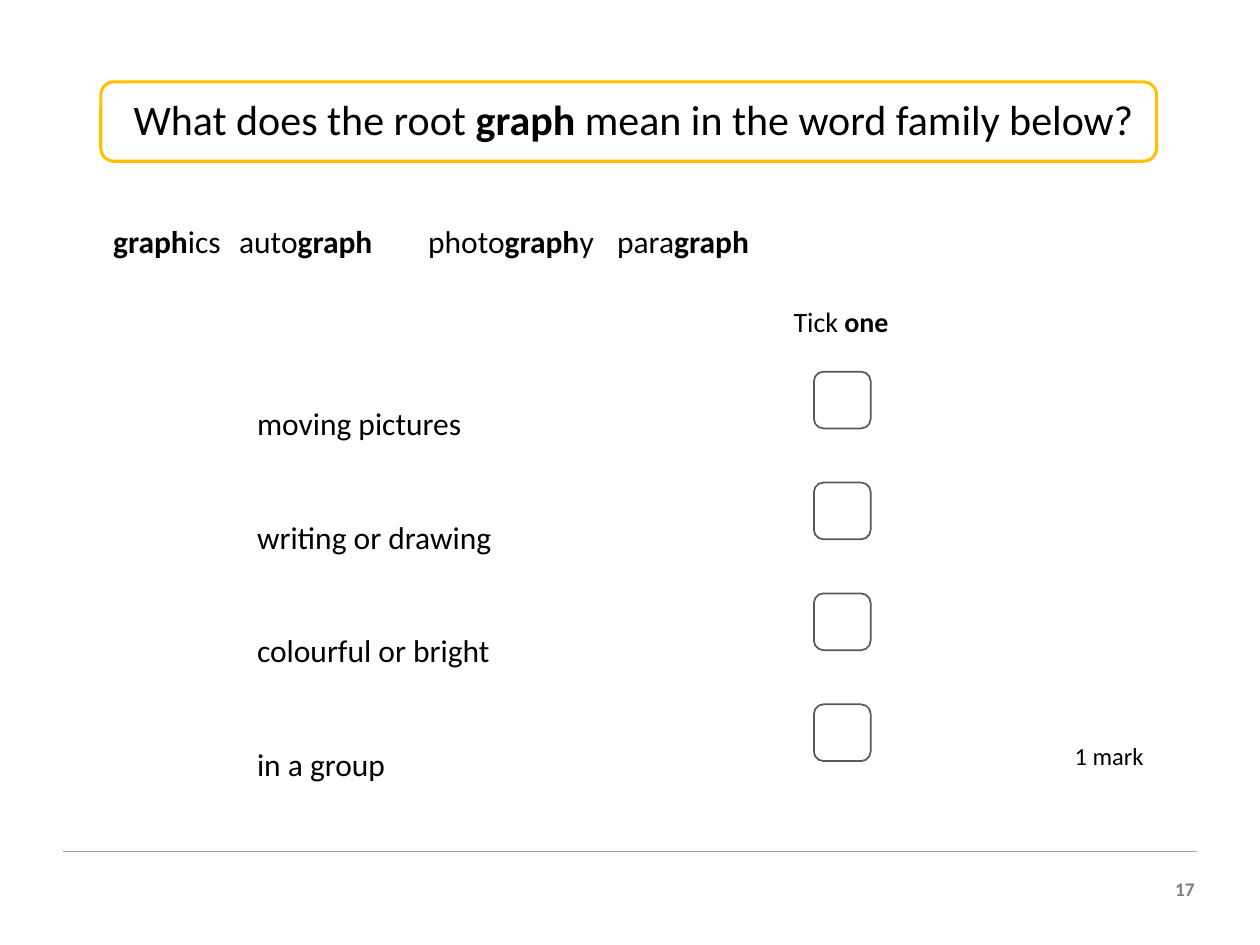
from lxml.etree import SubElement
from pptx import Presentation
from pptx.dml.color import RGBColor
from pptx.enum.shapes import MSO_CONNECTOR, MSO_SHAPE
from pptx.enum.text import MSO_ANCHOR, MSO_AUTO_SIZE, PP_ALIGN
from pptx.oxml.ns import qn
from pptx.util import Inches, Pt

# Words between ** marks are bold.
QUESTION = "What does the root **graph** mean in the word family below?"
WORD_FAMILY = ["**graph**ics", "auto**graph**", "photo**graph**y", "para**graph**"]
MEANINGS = ["moving pictures", "writing or drawing", "colourful or bright", "in a group"]
INSTRUCTION = "Tick **one**"
MARKS = "1 mark"
PAGE_NUMBER = "**17**"

WORD_GAP = 2
TICK_LEFT, TICK_TOP, TICK_SIZE, TICK_STEP = 6.46, 2.95, 0.45, 0.88


def color(hex_value):
    return RGBColor.from_string(hex_value)


def place(shape, left, top, width, height):
    box = dict(left=left, top=top, width=width, height=height)
    for side, length in box.items():
        setattr(shape, side, Inches(length))


def write(shape, lines, size, ink="000000", tabs=(), wrap=True, **paragraph_format):
    """Fill a shape with one paragraph per line, turning ** marks into bold runs."""
    frame = shape.text_frame
    frame_format = dict(word_wrap=wrap, auto_size=MSO_AUTO_SIZE.NONE,
                        vertical_anchor=MSO_ANCHOR.TOP)
    for name, value in frame_format.items():
        setattr(frame, name, value)
    layout = dict(alignment=PP_ALIGN.LEFT, space_before=Pt(0)) | paragraph_format
    for index, line in enumerate(lines):
        paragraph = frame.add_paragraph() if index else frame.paragraphs[0]
        properties = paragraph._p.get_or_add_pPr()
        properties.set("marL", "0")
        properties.set("indent", "0")
        SubElement(properties, qn("a:buNone"))
        if tabs:
            tab_list = SubElement(properties, qn("a:tabLst"))
            for stop in tabs:
                SubElement(tab_list, qn("a:tab"), pos=str(Inches(stop)), algn="l")
        for name, value in layout.items():
            setattr(paragraph, name, value)
        for part, words in enumerate(line.split("**")):
            if words:
                run = paragraph.add_run()
                run.text = words
                font = dict(name="Calibri", size=Pt(size), bold=part % 2 == 1)
                for name, value in font.items():
                    setattr(run.font, name, value)
                run.font.color.rgb = color(ink)


def add_text(slide, box, *args, **kwargs):
    text_box = slide.shapes.add_textbox(*map(Inches, box))
    write(text_box, *args, **kwargs)


def add_outline(slide, box, line, weight):
    outline = slide.shapes.add_shape(MSO_SHAPE.ROUNDED_RECTANGLE, *map(Inches, box))
    outline.shadow.inherit = False
    outline.fill.solid()
    outline.fill.fore_color.rgb = color("FFFFFF")
    outline.line.color.rgb = color(line)
    outline.line.width = Pt(weight)


def main():
    presentation = Presentation()
    presentation.slide_width, presentation.slide_height = Inches(10), Inches(7.5)
    slide = presentation.slides.add_slide(presentation.slide_layouts[1])
    title, meanings = slide.placeholders

    rule = slide.shapes.add_connector(
        MSO_CONNECTOR.STRAIGHT, *map(Inches, (0.5, 6.76, 9.5, 6.76)))
    rule.line.color.rgb = color("A5A5A5")
    rule.line.width = Pt(0.75)
    SubElement(rule._element.spPr, qn("a:effectLst"))
    add_text(slide, (9.2, 6.91, 0.38, 0.29), [PAGE_NUMBER], 11, "7F7F7F",
             wrap=False, alignment=PP_ALIGN.RIGHT)

    add_outline(slide, (0.8, 0.65, 8.38, 0.63), "FFC000", 1.75)
    place(title, 0.96, 0.69, 8.64, 0.5)
    write(title, [QUESTION], 24)
    slide.shapes._spTree.append(title._element)  # in front of its outline

    tabs = [WORD_GAP * column for column in range(1, len(WORD_FAMILY))]
    add_text(slide, (0.8, 1.41, 8.64, 0.62), ["\t".join(WORD_FAMILY)], 18,
             tabs=tabs, line_spacing=2.0)

    place(meanings, 1.94, 2.56, 2.09, 3.58)
    write(meanings, MEANINGS, 18, wrap=False, line_spacing=3.0)
    add_text(slide, (6.2, 2.37, 0.96, 0.37), [INSTRUCTION], 16, wrap=False)
    for row in range(len(MEANINGS)):
        top = TICK_TOP + row * TICK_STEP
        add_outline(slide, (TICK_LEFT, top, TICK_SIZE, TICK_SIZE), "595959", 1)
    add_text(slide, (8.43, 5.83, 0.75, 0.34), [MARKS], 14, wrap=False)

    presentation.save("out.pptx")


if __name__ == "__main__":
    main()
